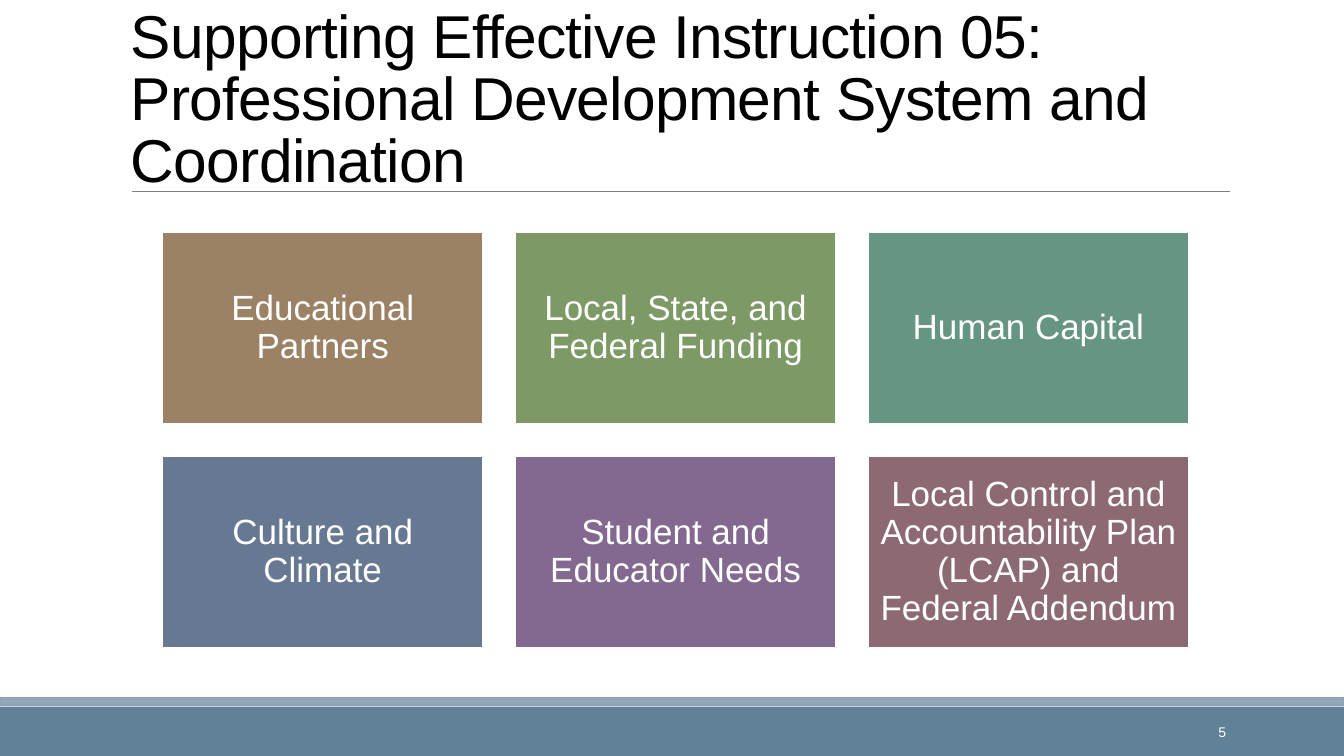
from lxml import etree
from pptx import Presentation
from pptx.dml.color import RGBColor
from pptx.enum.shapes import MSO_CONNECTOR, MSO_SHAPE
from pptx.enum.text import MSO_ANCHOR as Anchor, PP_ALIGN as Align
from pptx.oxml.ns import qn
from pptx.util import Pt

TITLE = ("Supporting Effective Instruction 05: "
         "Professional Development System and Coordination")
PAGE_NUMBER = "5"
TOPICS = [
    ("Educational Partners", "9C8265"),
    ("Local, State, and Federal Funding", "7C9966"),
    ("Human Capital", "669683"),
    ("Culture and Climate", "677893"),
    ("Student and Educator Needs", "836890"),
    ("Local Control and Accountability Plan (LCAP) and Federal Addendum", "8D6974"),
]
PAGE_WIDTH, PAGE_HEIGHT = 960, 540
COLUMNS = 3
GRID_LEFT, GRID_TOP = 116, 165.8
CARD_WIDTH, CARD_HEIGHT = 229, 137.2
COLUMN_STEP, ROW_STEP = 252, 160


def color(value):
    return RGBColor.from_string(value)


def add_block(page, place, fill, outline=None):
    block = page.shapes.add_shape(MSO_SHAPE.RECTANGLE, *map(Pt, place))
    block.shadow.inherit = False
    block.fill.solid()
    block.fill.fore_color.rgb = color(fill)
    if outline:
        block.line.color.rgb = color(outline)
        block.line.width = Pt(1.25)
    else:
        block.line.fill.background()
    return block


def write(box, text, size, ink, align, anchor, spacing=1.0, insets=(7.2, 3.6)):
    frame = box.text_frame
    frame.word_wrap = True
    frame.vertical_anchor = anchor
    frame.margin_left = frame.margin_right = Pt(insets[0])
    frame.margin_top = frame.margin_bottom = Pt(insets[1])
    para = frame.paragraphs[0]
    para.text = text
    para.alignment = align
    para.line_spacing = spacing
    para.font.name = "Arial"
    para.font.size = Pt(size)
    para.font.color.rgb = color(ink)
    return para


def add_text(page, place, *style):
    return write(page.shapes.add_textbox(*map(Pt, place)), *style)


def main():
    deck = Presentation()
    deck.slide_width, deck.slide_height = Pt(PAGE_WIDTH), Pt(PAGE_HEIGHT)
    page = deck.slides.add_slide(deck.slide_layouts[6])

    add_block(page, (0, 504.8, PAGE_WIDTH, 35.2), "618197")
    add_block(page, (0, 498.8, PAGE_WIDTH, 5), "92A9B9", "8FA3B6")

    rule = page.shapes.add_connector(
        MSO_CONNECTOR.STRAIGHT, Pt(94.3), Pt(136.6), Pt(878.4), Pt(136.6))
    rule.line.color.rgb = color("808080")
    rule.line.width = Pt(0.5)
    etree.SubElement(rule._element.spPr, qn("a:effectLst"))

    title = add_text(page, (86.4, 28, 792, 114.5), TITLE, 43.2, "000000",
                     Align.LEFT, Anchor.BOTTOM, 0.85)
    title.runs[0]._r.get_or_add_rPr().set("spc", "-50")
    add_text(page, (779.8, 508.3, 103, 28.8), PAGE_NUMBER, 10, "FFFFFF",
             Align.RIGHT, Anchor.MIDDLE)

    for index, (topic, fill) in enumerate(TOPICS):
        row, column = divmod(index, COLUMNS)
        place = (GRID_LEFT + column * COLUMN_STEP, GRID_TOP + row * ROW_STEP,
                 CARD_WIDTH, CARD_HEIGHT)
        card = add_block(page, place, fill, "FFFFFF")
        write(card, topic, 25, "FFFFFF", Align.CENTER, Anchor.MIDDLE, 0.9, (7.2, 7.2))

    deck.save("out.pptx")


if __name__ == "__main__":
    main()
